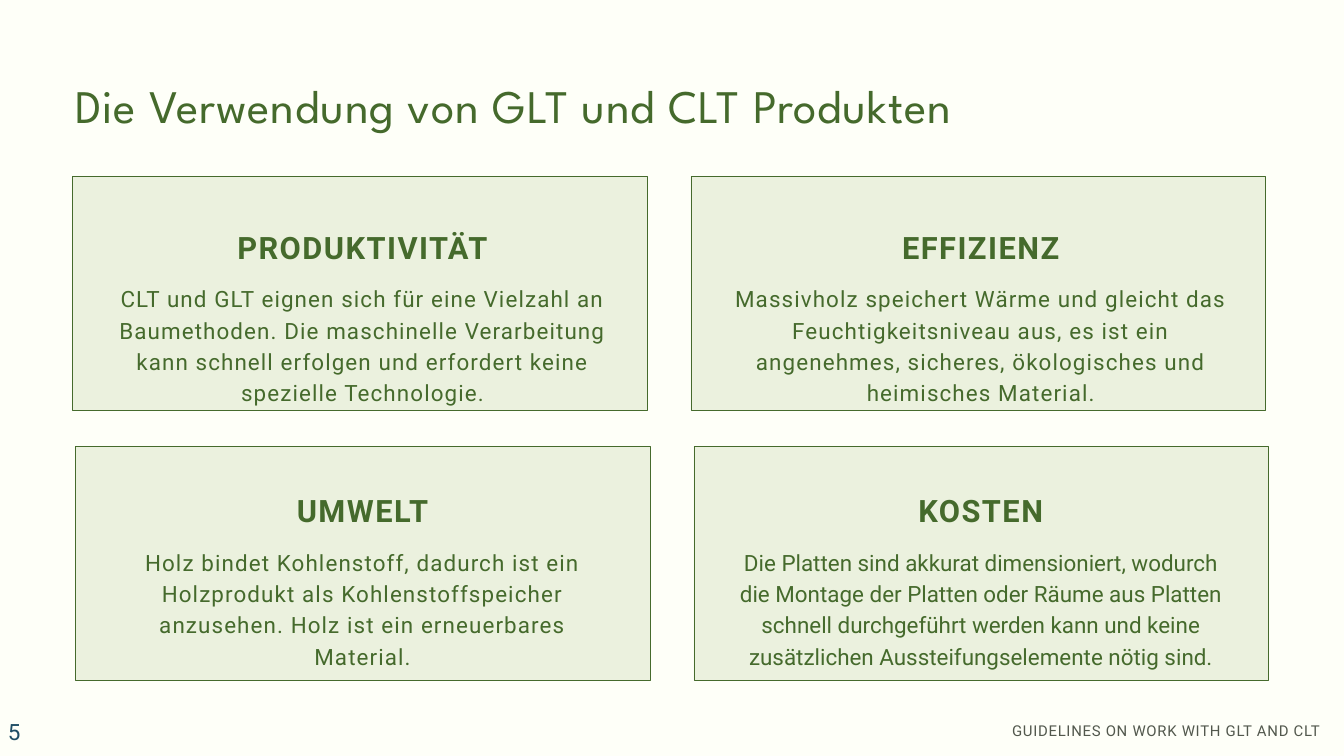
from pptx import Presentation
from pptx.dml.color import RGBColor
from pptx.enum.shapes import MSO_SHAPE as Shape
from pptx.enum.text import MSO_ANCHOR as Anchor, MSO_AUTO_SIZE as AutoSize, PP_ALIGN as Align
from pptx.util import Pt

COLORS = {
    "paper": "FEFFF8",
    "green": "456A2C",
    "pale": "EBF1DE",
    "grey": "52584D",
    "navy": "1E4D65",
}

COLUMN_STEP = 662.4
TEXT_LEFT, TEXT_WIDTH = 122.4, 532.1
CARD_WIDTH, CARD_HEIGHT = 615.6, 250.6

ROWS = [
    {
        "card": (77.8, 188.6),
        "heading_top": 243.4,
        "topics": [
            ("PRODUKTIVITÄT",
             "CLT und GLT eignen sich für eine Vielzahl an Baumethoden. "
             "Die maschinelle Verarbeitung kann schnell erfolgen und "
             "erfordert keine spezielle Technologie.", 1.2),
            ("EFFIZIENZ",
             "Massivholz speichert Wärme und gleicht das Feuchtigkeitsniveau "
             "aus, es ist ein angenehmes, sicheres, ökologisches und "
             "heimisches Material.", 1.2),
        ],
    },
    {
        "card": (81, 478.1),
        "heading_top": 525.6,
        "topics": [
            ("UMWELT",
             "Holz bindet Kohlenstoff, dadurch ist ein Holzprodukt als "
             "Kohlenstoffspeicher anzusehen. Holz ist ein erneuerbares "
             "Material.", 1.2),
            ("KOSTEN",
             "Die Platten sind akkurat dimensioniert, wodurch die Montage der "
             "Platten oder Räume aus Platten schnell durchgeführt werden kann "
             "und keine zusätzlichen Aussteifungselemente nötig sind.", 0),
        ],
    },
]


class SlideBuilder:
    def __init__(self, slide):
        self.slide = slide

    def color(self, name):
        return RGBColor.from_string(COLORS[name])

    def background(self, name):
        fill = self.slide.background.fill
        fill.solid()
        fill.fore_color.rgb = self.color(name)

    def card(self, left, top):
        card = self.slide.shapes.add_shape(
            Shape.RECTANGLE, Pt(left), Pt(top), Pt(CARD_WIDTH), Pt(CARD_HEIGHT))
        card.shadow.inherit = False
        card.fill.solid()
        card.fill.fore_color.rgb = self.color("pale")
        card.line.color.rgb = self.color("green")
        card.line.width = Pt(0.75)

    def text(self, words, left, top, width, height, size, color="green",
             font="Roboto", align=Align.LEFT, leading=None, spacing=0,
             bold=False, inset=(0, 0), anchor=Anchor.TOP):
        box = self.slide.shapes.add_textbox(Pt(left), Pt(top), Pt(width), Pt(height))
        frame = box.text_frame
        frame.word_wrap = True
        frame.auto_size = AutoSize.NONE
        frame.vertical_anchor = anchor
        frame.margin_left = frame.margin_right = Pt(inset[0])
        frame.margin_top = frame.margin_bottom = Pt(inset[1])
        paragraph = frame.paragraphs[0]
        paragraph.alignment = align
        if leading:
            paragraph.line_spacing = Pt(leading)
        paragraph.font.size = Pt(size)
        paragraph.font.name = font
        paragraph.font.bold = bold
        paragraph.font.color.rgb = self.color(color)
        run = paragraph.add_run()
        run.text = words
        if spacing:
            run._r.get_or_add_rPr().set("spc", str(round(spacing * 100)))

    def topic(self, heading, body, body_spacing, left, top):
        self.text(heading, left, top, TEXT_WIDTH, 40.3, 33, align=Align.CENTER,
                  leading=41.2, spacing=1.6, bold=True)
        self.text(body, left, top + 57.6, TEXT_WIDTH, 134.6, 24,
                  align=Align.CENTER, leading=33.6, spacing=body_spacing)


def main():
    presentation = Presentation()
    presentation.slide_width = Pt(1440)
    presentation.slide_height = Pt(810)
    builder = SlideBuilder(presentation.slides.add_slide(presentation.slide_layouts[6]))

    builder.background("paper")
    builder.text("GUIDELINES ON WORK WITH GLT AND CLT", 815.8, 770.4, 599, 20.9, 16,
                 color="grey", align=Align.RIGHT, leading=22.4, spacing=0.8)
    builder.text("Die Verwendung von GLT und CLT Produkten", 80.6, 75.6, 1275.1, 67.7,
                 50, font="League Spartan", leading=66.8, spacing=1)

    for row in ROWS:
        card_left, card_top = row["card"]
        for column, (heading, body, body_spacing) in enumerate(row["topics"]):
            shift = column * COLUMN_STEP
            builder.card(card_left + shift, card_top)
            builder.topic(heading, body, body_spacing,
                          TEXT_LEFT + shift, row["heading_top"])

    builder.text("5", 1.4, 769.7, 167.8, 28.8, 24, color="navy", spacing=1.2,
                 inset=(7.2, 3.6), anchor=Anchor.MIDDLE)

    presentation.save("out.pptx")


if __name__ == "__main__":
    main()
